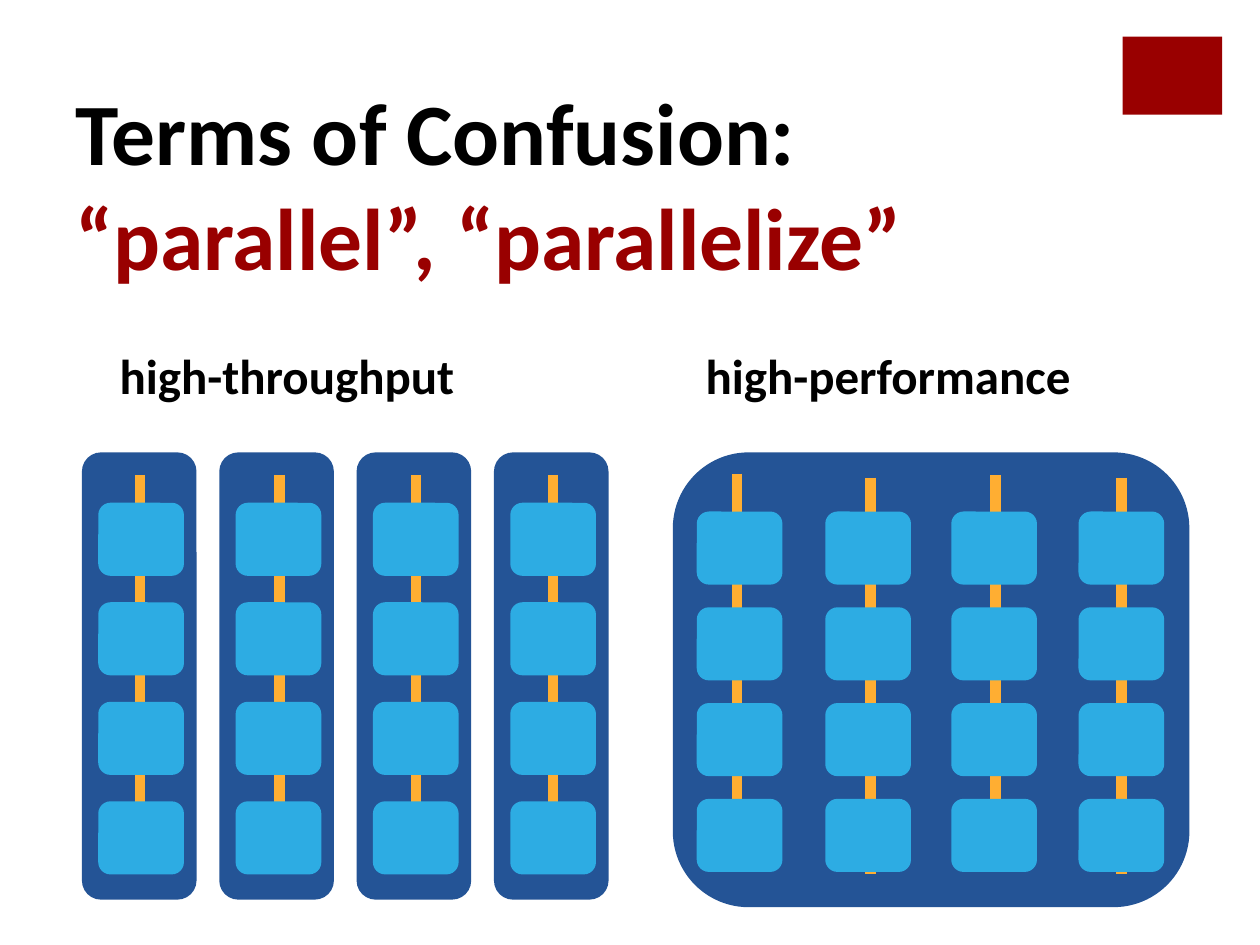
from lxml import etree
from pptx import Presentation
from pptx import util as u
from pptx.dml.color import RGBColor
from pptx.enum import shapes, text
from pptx.oxml import ns

RED, NAVY, SKY, AMBER, BLACK = "990000", "245496", "2DACE3", "FFAE32", "000000"


def colour(value):
    return RGBColor.from_string(value)


class SlideBuilder:
    font = {"name": "Calibri", "bold": True}

    def __init__(self, slide):
        self.slide = slide

    def block(self, kind, left, top, width, height, fill):
        shape = self.slide.shapes.add_shape(
            kind, u.Inches(left), u.Inches(top), u.Inches(width), u.Inches(height))
        shape.shadow.inherit = False
        shape.fill.solid()
        shape.fill.fore_color.rgb = colour(fill)
        shape.line.fill.background()

    def rounded(self, *place, fill):
        self.block(shapes.MSO_SHAPE.ROUNDED_RECTANGLE, *place, fill)

    def thread(self, x, top, length=3.15):
        line = self.slide.shapes.add_connector(
            shapes.MSO_CONNECTOR.STRAIGHT, u.Inches(x), u.Inches(top),
            u.Inches(x), u.Inches(top + length))
        line.line.width = u.Pt(6)
        line.line.color.rgb = colour(AMBER)
        etree.SubElement(line._element.spPr, ns.qn("a:effectLst"))

    def label(self, left, top, width, height, size, lines, inset=0.1, tab=None):
        box = self.slide.shapes.add_textbox(
            u.Inches(left), u.Inches(top), u.Inches(width), u.Inches(height))
        frame = box.text_frame
        frame_format = {"word_wrap": True, "margin_left": u.Inches(inset),
                        "vertical_anchor": text.MSO_ANCHOR.TOP}
        for name, value in frame_format.items():
            setattr(frame, name, value)
        for index, (words, ink) in enumerate(lines):
            paragraph = frame.add_paragraph() if index else frame.paragraphs[0]
            run = paragraph.add_run()
            run.text = words
            for name, value in {**self.font, "size": u.Pt(size)}.items():
                setattr(run.font, name, value)
            run.font.color.rgb = colour(ink)
            if tab:
                stops = etree.SubElement(
                    paragraph._p.get_or_add_pPr(), ns.qn("a:tabLst"))
                etree.SubElement(stops, ns.qn("a:tab"),
                                 pos=str(u.Inches(tab)), algn="l")

    def tiles(self, lefts, top, pitch, rows=4):
        for left in lefts:
            for row in range(rows):
                self.rounded(left, top + row * pitch, 0.68, 0.58, fill=SKY)


def main():
    presentation = Presentation()
    presentation.slide_width = u.Inches(10)
    presentation.slide_height = u.Inches(7.5)
    builder = SlideBuilder(presentation.slides.add_slide(presentation.slide_layouts[6]))

    builder.block(shapes.MSO_SHAPE.RECTANGLE, 8.91, 0.29, 0.79, 0.62, RED)
    builder.rounded(5.34, 3.59, 4.1, 3.61, fill=NAVY)
    columns = [1.09 * column for column in range(4)]
    for offset in columns:
        builder.rounded(0.65 + offset, 3.59, 0.91, 3.55, fill=NAVY)

    throughput_threads = [(x, 3.77) for x in (1.11, 2.22, 3.3, 4.39)]
    performance_threads = [(5.85, 3.76), (6.91, 3.79), (7.9, 3.77), (8.9, 3.79)]
    for x, top in throughput_threads + performance_threads:
        builder.thread(x, top)

    builder.label(0.5, 0.57, 9.16, 1.25, 50,
                  [("Terms of Confusion:", BLACK), ("“parallel”, “parallelize”", RED)])
    builder.label(0.32, 2.69, 9.34, 0.57, 28,
                  [("high-throughput\thigh-performance", BLACK)], inset=0.63, tab=4.65)

    builder.tiles([0.78 + offset for offset in columns], 3.99, 0.79)
    builder.tiles([5.53, 6.55, 7.55, 8.56], 4.06, 0.76)

    presentation.save("out.pptx")


if __name__ == "__main__":
    main()
